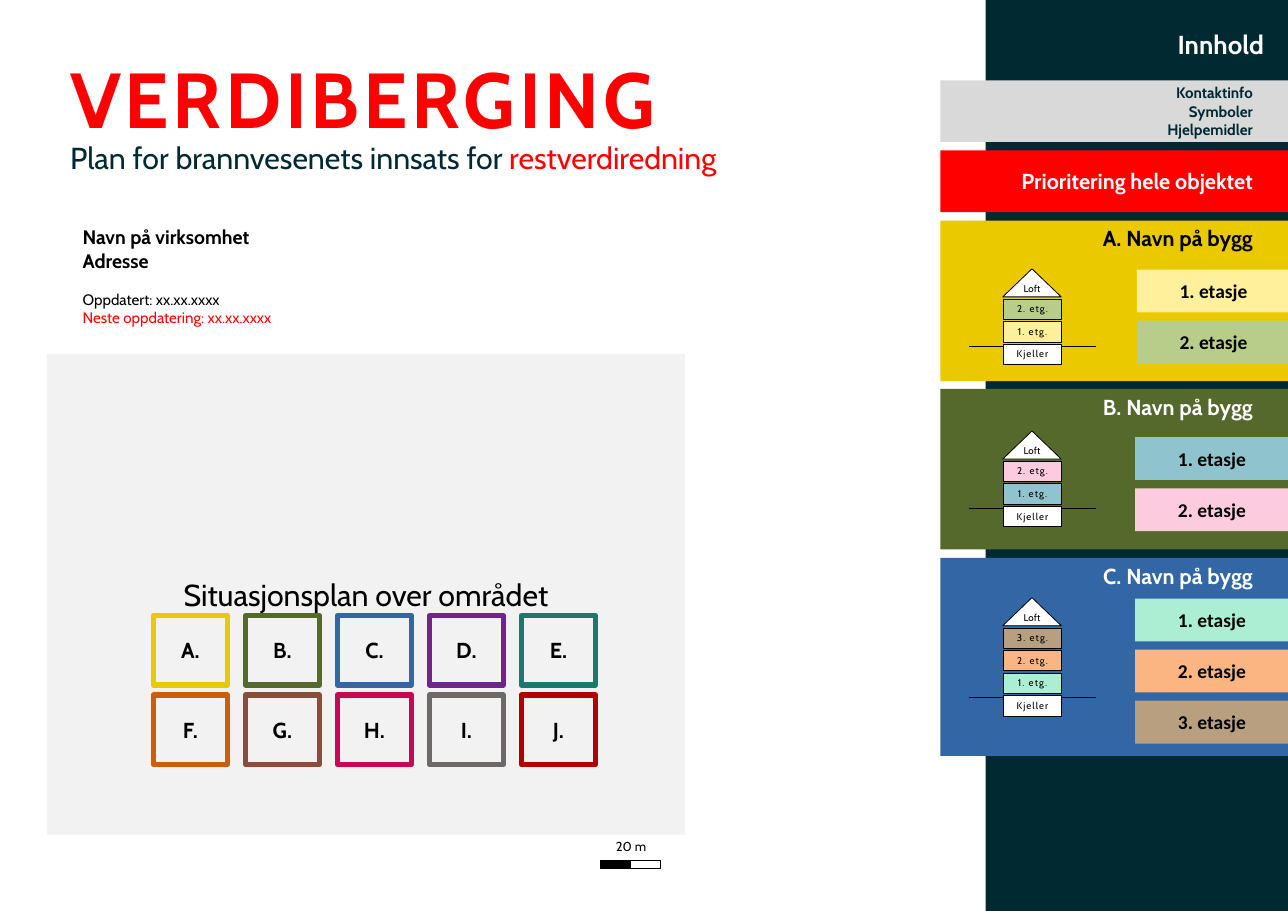
import pptx
import pptx.util
import pptx.dml.color
import pptx.enum.shapes
import pptx.enum.text
import pptx.oxml.ns
import lxml.etree

Pt = pptx.util.Pt
MSO = pptx.enum.shapes.MSO_SHAPE
ALIGN = pptx.enum.text.PP_ALIGN
ANCHOR = pptx.enum.text.MSO_ANCHOR

THEME = {
    "font": "Cabin", "floor_font": "Calibri",
    "navy": "002932", "red": "FF0000", "black": "000000", "white": "FFFFFF",
    "grey": "D9D9D9", "panel": "F2F2F2",
    "yellow": "EAC900", "olive": "56692D", "blue": "3266A4",
    "purple": "6E268E", "teal": "1A786D", "orange": "CD5D09",
    "brown": "894E3B", "pink": "C80851", "stone": "6D6969", "crimson": "B00000",
    "cream": "FFF19B", "sage": "B8CD89", "sky": "8FC3CD", "rose": "FDCBDE",
    "mint": "ACEED3", "peach": "FAB582", "tan": "B79F7F",
    "hero": 72, "lead": 28, "contents": 24, "heading": 20, "floor": 18,
    "body": 14, "scale": 12, "house": 9,
}


def rgb(name):
    return pptx.dml.color.RGBColor.from_string(THEME[name])


def box(shapes, kind, at, fill=None, line=None, weight=0.75, paras=(), size="body",
        color="black", bold=False, font="font", spacing=0, align=ALIGN.CENTER,
        anchor=ANCHOR.MIDDLE, inset=(7.9, 4.3, 7.9, 4.3)):
    at = [Pt(v) for v in at]
    if kind is None:
        sp = shapes.add_textbox(*at)
    else:
        sp = shapes.add_shape(kind, *at)
        sp.shadow.inherit = False
        if fill:
            sp.fill.solid()
            sp.fill.fore_color.rgb = rgb(fill)
        else:
            sp.fill.background()
        if line:
            sp.line.color.rgb = rgb(line)
            sp.line.width = Pt(weight)
        else:
            sp.line.fill.background()
    tf = sp.text_frame
    tf.word_wrap = True
    tf.vertical_anchor = anchor
    tf.margin_left, tf.margin_top, tf.margin_right, tf.margin_bottom = [Pt(v) for v in inset]
    for i, runs in enumerate(paras):
        p = tf.paragraphs[0] if i == 0 else tf.add_paragraph()
        p.alignment = align
        for text, *run_color in runs:
            r = p.add_run()
            r.text = text
            r.font.name = THEME[font]
            r.font.size = Pt(THEME[size])
            r.font.bold = bold
            r.font.color.rgb = rgb(run_color[0] if run_color else color)
            if spacing:
                r._r.get_or_add_rPr().set("spc", str(int(spacing * 100)))
    return sp


prs = pptx.Presentation()
prs.slide_width, prs.slide_height = Pt(1190.16), Pt(841.68)
s = prs.slides.add_slide(prs.slide_layouts[6])

box(s.shapes, MSO.RECTANGLE, (910.8, 0, 279.36, 841.68), "navy",
    paras=[[("Innhold",)]], size="contents", color="white", bold=True,
    align=ALIGN.RIGHT, anchor=ANCHOR.TOP, inset=(5.8, 26.6, 22.3, 8.6))

box(s.shapes, None, (0, 42.5, 738.7, 96.5), paras=[[("VERDIBERGING",)]],
    size="hero", color="red", bold=True, spacing=3.5,
    align=ALIGN.LEFT, anchor=ANCHOR.TOP, inset=(64.8, 4.3, 7.9, 4.3))
box(s.shapes, None, (0, 124.6, 738.7, 77),
    paras=[[("Plan for brannvesenets innsats for ",), ("restverdiredning", "red")]],
    size="lead", color="navy", align=ALIGN.LEFT, anchor=ANCHOR.TOP,
    inset=(64.8, 4.3, 7.9, 4.3))

sp = box(s.shapes, None, (68.4, 203.8, 286.6, 103),
         paras=[[("Navn på virksomhet",)], [("Adresse",)],
                [("Oppdatert: xx.xx.xxxx",)], [("Neste oppdatering: xx.xx.xxxx", "red")]],
         align=ALIGN.LEFT, anchor=ANCHOR.TOP)
for p in sp.text_frame.paragraphs[:2]:
    p.runs[0].font.size = Pt(THEME["floor"])
    p.runs[0].font.bold = True
sp.text_frame.paragraphs[2].space_before = Pt(17)

SECTION_X, SECTION_W = 869, 321.16
SECTION_INSET = (7.9, 4.3, 32.4, 4.3)
links = [
    (74.2, "grey", "navy", "body", ["Kontaktinfo", "Symboler", "Hjelpemidler"]),
    (139, "red", "white", "heading", ["Prioritering hele objektet"]),
]
for y, fill, color, size, lines in links:
    box(s.shapes, MSO.RECTANGLE, (SECTION_X, y, SECTION_W, 56.9), fill,
        paras=[[(t,)] for t in lines], size=size, color=color, bold=True,
        align=ALIGN.RIGHT, inset=SECTION_INSET)

buildings = [
    ("A", 203.8, 148.3, "yellow", "black", 248.4, 1050.5, 249.1, ["cream", "sage"]),
    ("B", 359.3, 148.3, "olive", "white", 398.2, 1049, 403.9, ["sky", "rose"]),
    ("C", 515.5, 182.9, "blue", "white", 552.2, 1049, 553, ["mint", "peach", "tan"]),
]
for letter, y, h, fill, color, roof_y, floor_x, floor_y, floors in buildings:
    box(s.shapes, MSO.RECTANGLE, (SECTION_X, y, SECTION_W, h), fill,
        paras=[[(f"{letter}. Navn på bygg",)]], size="heading", color=color, bold=True,
        align=ALIGN.RIGHT, anchor=ANCHOR.TOP, inset=SECTION_INSET)

    house = s.shapes.add_group_shape().shapes
    cellar_y = roof_y + 28 + 20.9 * len(floors)
    ground_y = Pt(cellar_y + 1.2)
    ground = house.add_connector(pptx.enum.shapes.MSO_CONNECTOR.STRAIGHT,
                                 Pt(895.7), ground_y, Pt(1012.3), ground_y)
    ground.line.color.rgb = rgb("black")
    ground.line.width = Pt(0.25)
    lxml.etree.SubElement(ground._element.spPr, pptx.oxml.ns.qn("a:effectLst"))
    box(house, MSO.ISOSCELES_TRIANGLE, (926.6, roof_y, 54, 25.9), "white", "black",
        paras=[[("Loft",)]], size="house", inset=(2.9, 3.6, 2.9, 5.8))
    storeys = [("Kjeller", "white")]
    storeys += [(f"{n}. etg.", tint) for n, tint in enumerate(floors, 1)]
    for n, (label, tint) in enumerate(storeys):
        box(house, MSO.RECTANGLE, (927.4, cellar_y - 20.9 * n, 53.3, 18.7), tint, "black",
            paras=[[(label,)]], size="house", spacing=1, anchor=ANCHOR.TOP,
            inset=(3.6, 3.6, 3.6, 3.6))

    for n, tint in enumerate(floors):
        box(s.shapes, MSO.RECTANGLE, (floor_x, floor_y + 47.2 * n, 141.8, 39.6), tint,
            paras=[[(f"{n + 1}. etasje",)]], size="floor", font="floor_font", bold=True)

scale = s.shapes.add_group_shape().shapes
for n, fill in enumerate(["black", "white"]):
    box(scale, MSO.RECTANGLE, (555.1 + 27.4 * n, 794.9, 27.4, 7.2), fill, "black", 0.5)
box(scale, None, (555.8, 774.7, 54.7, 14.4), paras=[[("20 m",)]], size="scale",
    anchor=ANCHOR.TOP, inset=(0, 0, 0, 0))

box(s.shapes, MSO.RECTANGLE, (43.2, 326.9, 589.7, 444.2), "panel",
    paras=[[("Situasjonsplan over området",)]], size="lead")
frames = ["yellow", "olive", "blue", "purple", "teal",
          "orange", "brown", "pink", "stone", "crimson"]
for n, (letter, outline) in enumerate(zip("ABCDEFGHIJ", frames)):
    row, col = divmod(n, 5)
    box(s.shapes, MSO.RECTANGLE, (141.8 + 85 * col, 568.8 + 73.4 * row, 68.4, 64.1),
        line=outline, weight=5, paras=[[(f"{letter}.",)]], size="heading", bold=True)

prs.save("out.pptx")
